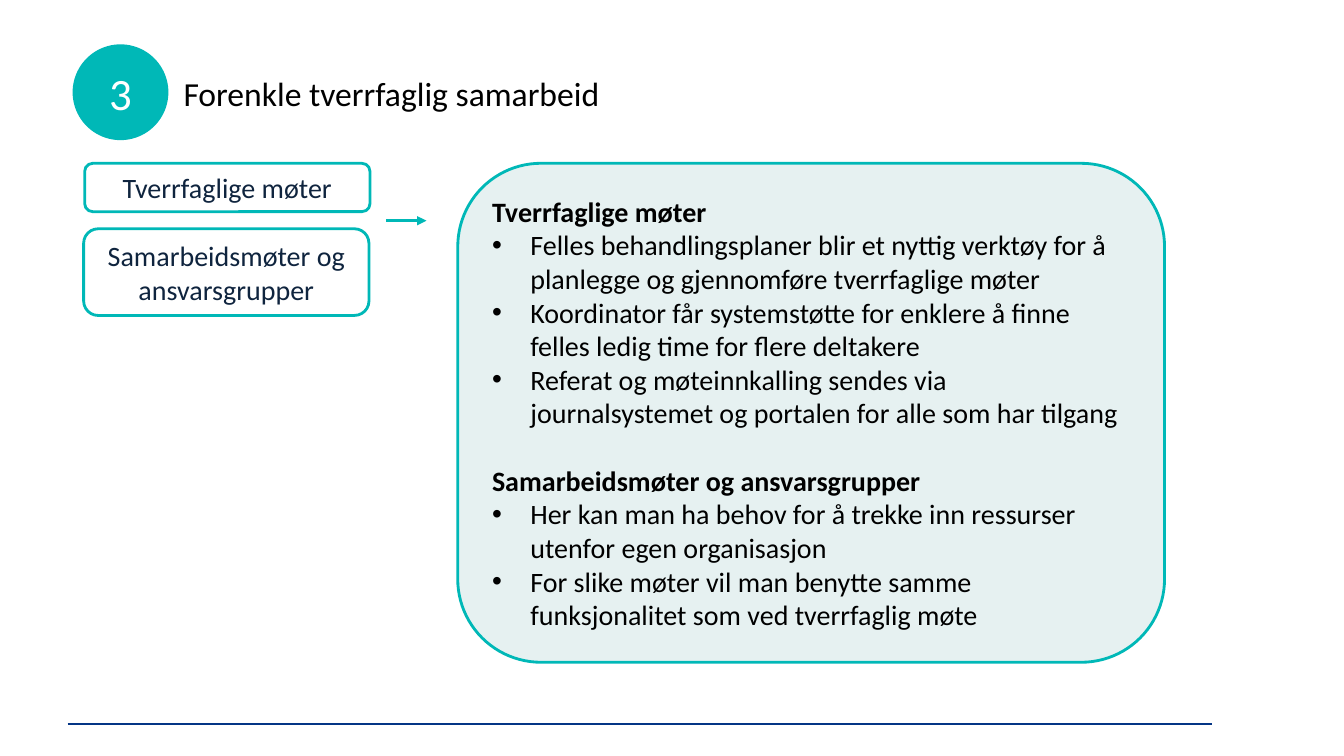
from lxml.etree import SubElement
from pptx import Presentation
from pptx.dml.color import RGBColor
from pptx.enum.shapes import MSO_CONNECTOR as Link, MSO_SHAPE as Form
from pptx.enum.text import MSO_ANCHOR as Anchor, MSO_AUTO_SIZE as Fit, PP_ALIGN as Align
from pptx.oxml.ns import qn
from pptx.util import Pt

PX = 9144
TEAL = "00B8B7"
WHITE = "FFFFFF"
BLACK = "000000"
NAVY = "0F243E"
TOPICS = [
    ("Tverrfaglige møter", [
        "Felles behandlingsplaner blir et nyttig verktøy for å planlegge og gjennomføre tverrfaglige møter",
        "Koordinator får systemstøtte for enklere å finne felles ledig time for flere deltakere",
        "Referat og møteinnkalling sendes via journalsystemet og portalen for alle som har tilgang",
    ]),
    ("Samarbeidsmøter og ansvarsgrupper", [
        "Her kan man ha behov for å trekke inn ressurser utenfor egen organisasjon",
        "For slike møter vil man benytte samme funksjonalitet som ved tverrfaglig møte",
    ]),
]


def rgb(code):
    return RGBColor.from_string(code)


def px(*nums):
    return [num * PX for num in nums]


def style(para, size, color, align=Align.LEFT, bold=False):
    para.alignment = align
    font = para.font
    font.name = "Calibri"
    font.size = Pt(size)
    font.bold = bold
    font.color.rgb = rgb(color)


def add_box(slide, form, area, fill, edge=None):
    box = slide.shapes.add_shape(form, *px(*area))
    box.shadow.inherit = False
    box.fill.solid()
    box.fill.fore_color.rgb = rgb(fill)
    if edge:
        box.line.color.rgb = rgb(edge)
        box.line.width = Pt(2)
    else:
        box.line.fill.background()
    frame = box.text_frame
    frame.word_wrap = True
    frame.vertical_anchor = Anchor.MIDDLE
    return frame


def add_label(slide, form, area, text, size, color, fill, edge=None):
    frame = add_box(slide, form, area, fill, edge)
    frame.text = text
    style(frame.paragraphs[0], size, color, Align.CENTER)


def add_line(slide, ends, color, width, arrow=False):
    line = slide.shapes.add_connector(Link.STRAIGHT, *px(*ends))
    line.line.color.rgb = rgb(color)
    line.line.width = Pt(width)
    if arrow:
        SubElement(line.line._get_or_add_ln(), qn("a:tailEnd"), type="triangle")
    SubElement(line._element.spPr, qn("a:effectLst"))


def add_bullet(para):
    props = para._p.get_or_add_pPr()
    props.set("marL", str(38 * PX))
    props.set("indent", str(-38 * PX))
    SubElement(props, qn("a:buFont"), typeface="Arial")
    SubElement(props, qn("a:buChar"), char="•")


def add_panel(slide, area, topics):
    frame = add_box(slide, Form.ROUNDED_RECTANGLE, area, "E6F1F1", TEAL)
    para = frame.paragraphs[0]
    for num, (head, points) in enumerate(topics):
        if num:
            para = frame.add_paragraph()
            para.space_before = Pt(24)
        para.text = head
        style(para, 20, BLACK, bold=True)
        for point in points:
            para = frame.add_paragraph()
            para.text = point
            add_bullet(para)
            style(para, 20, BLACK)


def set_title(slide, area, text):
    title = slide.shapes.title
    title.left, title.top, title.width, title.height = px(*area)
    frame = title.text_frame
    frame.text = text
    frame.auto_size = Fit.NONE
    frame.vertical_anchor = Anchor.MIDDLE
    style(frame.paragraphs[0], 24, BLACK)


def main():
    deck = Presentation()
    deck.slide_width, deck.slide_height = px(1333, 750)
    slide = deck.slides.add_slide(deck.slide_layouts[5])
    set_title(slide, (172, 65, 699, 55), "Forenkle tverrfaglig samarbeid")
    add_line(slide, (67, 718, 1202, 718), "043585", 1.25)
    add_panel(slide, (454, 162, 701, 495), TOPICS)
    add_line(slide, (383, 219, 423, 219), TEAL, 2.25, arrow=True)
    add_label(slide, Form.OVAL, (72, 44, 95, 95), "3", 32, WHITE, TEAL)
    areas = [(84, 162, 283, 48), (83, 227, 283, 86)]
    for area, (head, points) in zip(areas, TOPICS):
        add_label(slide, Form.ROUNDED_RECTANGLE, area, head, 20, NAVY, WHITE, TEAL)
    deck.save("out.pptx")


if __name__ == "__main__":
    main()
